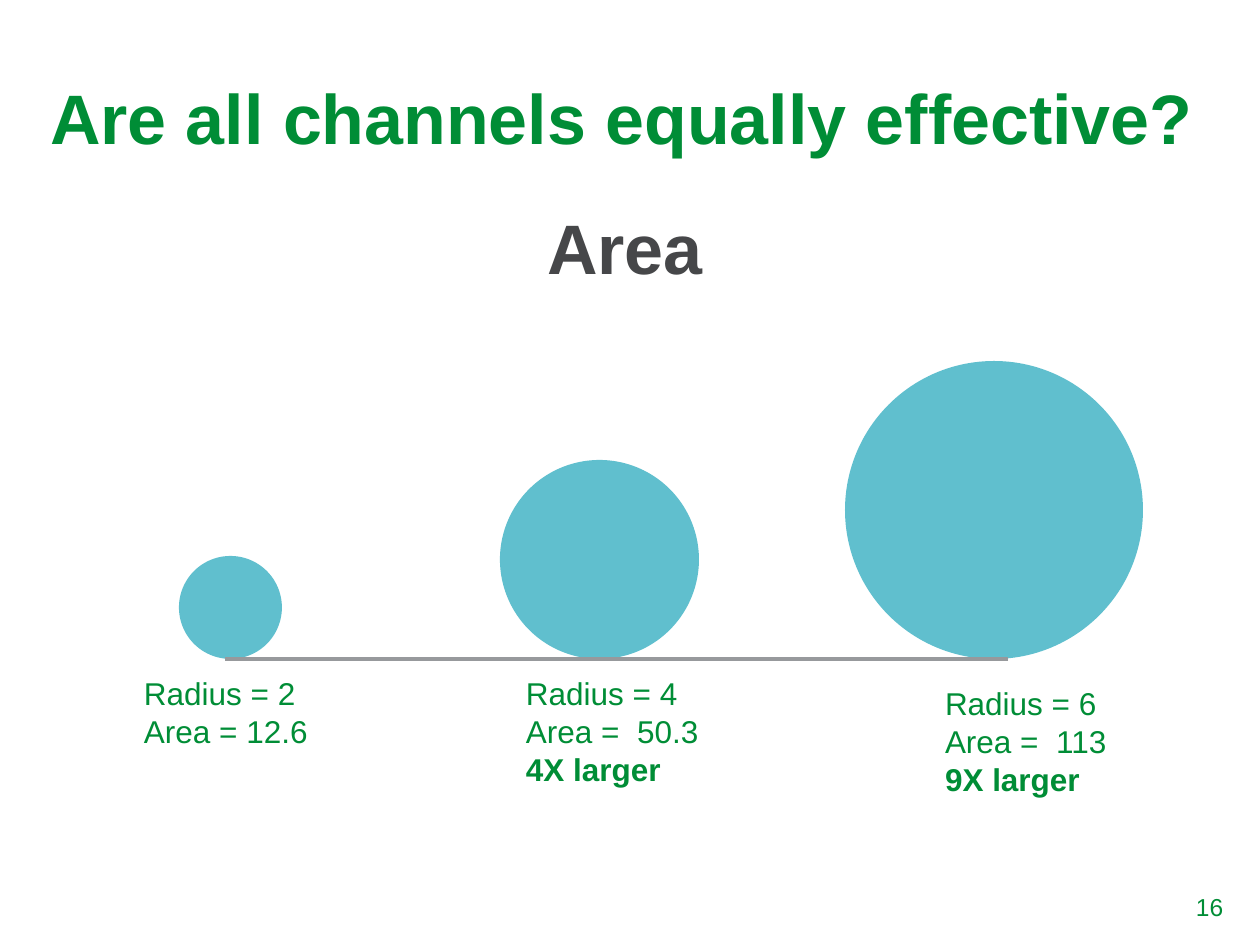
"""Build a slide comparing the areas of three circles."""
from dataclasses import dataclass

from lxml import etree
from pptx import Presentation
from pptx.dml.color import RGBColor
from pptx.enum.shapes import MSO_CONNECTOR, MSO_SHAPE
from pptx.enum.text import MSO_ANCHOR, PP_ALIGN
from pptx.oxml.ns import qn
from pptx.util import Emu, Pt

GREEN = RGBColor(0x00, 0x8D, 0x36)
DARK = RGBColor(0x46, 0x47, 0x49)
TEAL = RGBColor(0x60, 0xBF, 0xCE)
GRAY = RGBColor(0x97, 0x99, 0x9C)
OVAL = MSO_SHAPE.OVAL
LINE = MSO_CONNECTOR.STRAIGHT
TOP, MIDDLE, BOTTOM = MSO_ANCHOR.TOP, MSO_ANCHOR.MIDDLE, MSO_ANCHOR.BOTTOM
LEFT, CENTER = PP_ALIGN.LEFT, PP_ALIGN.CENTER
FONT = "Arial"
BASE = 659


def px(count: int) -> Emu:
    return Emu(round(count * 914400 / 126))


@dataclass(frozen=True)
class Box:
    left: int
    top: int
    width: int
    height: int


@dataclass(frozen=True)
class Label:
    box: Box
    lines: tuple[str, ...]
    size: int = 18
    color: RGBColor = GREEN
    bold: tuple[int, ...] = ()
    anchor: MSO_ANCHOR = TOP
    align: PP_ALIGN = LEFT
    inset: tuple[int, int] = (13, 6)
    pitch: float = 1.0
    wrap: bool = True


@dataclass(frozen=True)
class Disc:
    left: int
    size: int


LABELS = (
    Label(Box(1183, 882, 77, 50), ("16",), size=14, anchor=MIDDLE),
    Label(Box(131, 668, 199, 89), ("Radius = 2", "Area = 12.6"), wrap=False),
    Label(Box(513, 668, 208, 127), ("Radius = 4", "Area =  50.3", "4X larger"),
          bold=(2,), wrap=False),
    Label(Box(932, 678, 197, 127), ("Radius = 6", "Area =  113", "9X larger"),
          bold=(2,), wrap=False),
    Label(Box(50, 29, 1164, 129), ("Are all channels equally effective?",),
          size=40, bold=(0,), anchor=BOTTOM, inset=(0, 0), pitch=0.8),
    Label(Box(43, 171, 1164, 117), ("Area",), size=40, color=DARK, bold=(0,),
          anchor=BOTTOM, align=CENTER, inset=(0, 0), pitch=0.8),
)
DISCS = (Disc(179, 103), Disc(500, 199), Disc(845, 298))


def draw_label(slide, label: Label) -> None:
    box = label.box
    frame = slide.shapes.add_textbox(
        px(box.left), px(box.top), px(box.width), px(box.height)).text_frame
    frame.word_wrap = label.wrap
    frame.vertical_anchor = label.anchor
    side, edge = label.inset
    frame.margin_left = frame.margin_right = px(side)
    frame.margin_top = frame.margin_bottom = px(edge)
    for row, text in enumerate(label.lines):
        para = frame.add_paragraph() if row else frame.paragraphs[0]
        para.alignment = label.align
        para.line_spacing = label.pitch
        run = para.add_run()
        run.text = text
        run.font.name = FONT
        run.font.size = Pt(label.size)
        run.font.bold = row in label.bold
        run.font.color.rgb = label.color


def draw_disc(slide, disc: Disc) -> None:
    shape = slide.shapes.add_shape(
        OVAL, px(disc.left), px(BASE - disc.size), px(disc.size), px(disc.size))
    shape.shadow.inherit = False
    shape.fill.solid()
    shape.fill.fore_color.rgb = TEAL
    shape.line.fill.background()


def draw_base(slide, start: int, end: int) -> None:
    line = slide.shapes.add_connector(LINE, px(start), px(BASE), px(end), px(BASE))
    line.line.color.rgb = GRAY
    line.line.width = Pt(2)
    etree.SubElement(line._element.spPr, qn("a:effectLst"))


def main() -> None:
    deck = Presentation()
    deck.slide_width, deck.slide_height = px(1260), px(945)
    slide = deck.slides.add_slide(deck.slide_layouts[6])
    for label in LABELS:
        draw_label(slide, label)
    for disc in DISCS:
        draw_disc(slide, disc)
    draw_base(slide, 1008, 225)
    deck.save("out.pptx")


if __name__ == "__main__":
    main()
